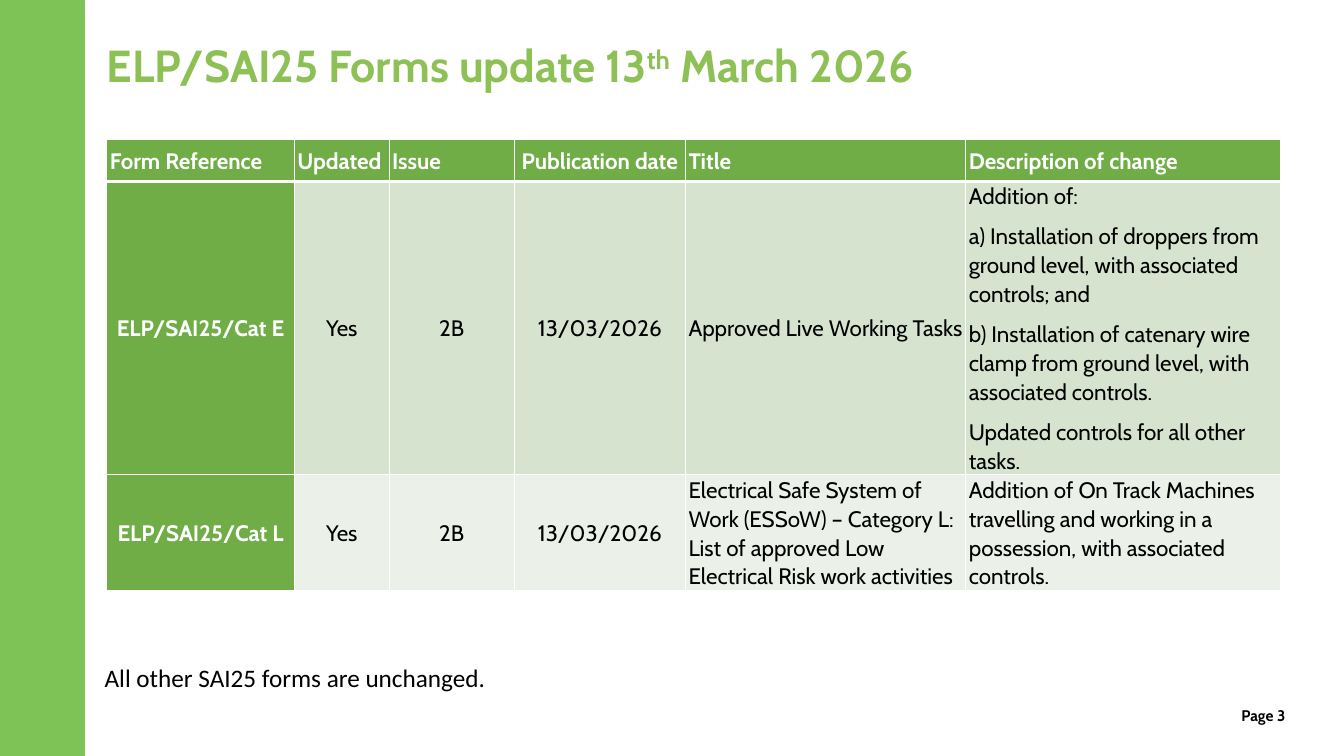
from dataclasses import dataclass

from lxml import etree
from pptx import Presentation
from pptx.dml.color import RGBColor
from pptx.enum.shapes import MSO_SHAPE
from pptx.enum.text import MSO_ANCHOR, MSO_AUTO_SIZE, PP_ALIGN
from pptx.oxml.ns import qn
from pptx.util import Inches, Pt

RECTANGLE = MSO_SHAPE.RECTANGLE
MIDDLE = MSO_ANCHOR.MIDDLE
NO_FIT = MSO_AUTO_SIZE.NONE
LEFT, CENTER = PP_ALIGN.LEFT, PP_ALIGN.CENTER


@dataclass(frozen=True)
class Theme:
    white: str = "FFFFFF"
    black: str = "000000"
    side_band: str = "7DC356"
    title_green: str = "8DC055"
    header_green: str = "70AD47"
    row_fills: tuple = ("D5E3CF", "EBF1E9")
    heading_font: str = "Cabin"
    note_font: str = "Calibri"
    title_size: int = 32
    note_size: int = 18
    table_size: int = 16
    page_size: int = 11


THEME = Theme()
TITLE_PARTS = ("ELP/SAI25 Forms update 13", "th", " March 2026")
COLUMN_WIDTHS = (1.86, 0.94, 1.24, 1.7, 2.78, 3.12)
ROW_HEIGHTS = (0.42, 2.91, 1.15)
HEADER_ALIGNMENTS = (LEFT, LEFT, LEFT, CENTER, LEFT, LEFT)
BODY_ALIGNMENTS = (CENTER, CENTER, CENTER, CENTER, LEFT, LEFT)
FORM_ROWS = (
    ("Form Reference", "Updated", "Issue", "Publication date", "Title",
     "Description of change"),
    ("ELP/SAI25/Cat E", "Yes", "2B", "13/03/2026", "Approved Live Working Tasks",
     "Addition of:\n"
     "a) Installation of droppers from ground level, with associated controls; and\n"
     "b) Installation of catenary wire clamp from ground level, with associated controls.\n"
     "Updated controls for all other tasks."),
    ("ELP/SAI25/Cat L", "Yes", "2B", "13/03/2026",
     "Electrical Safe System of Work (ESSoW) – Category L: "
     "List of approved Low Electrical Risk work activities",
     "Addition of On Track Machines travelling and working in a possession, "
     "with associated controls."),
)


def format_run(run, font_name, size, color, bold=False):
    run.font.name = font_name
    run.font.size = Pt(size)
    run.font.bold = bold
    run.font.color.rgb = RGBColor.from_string(color)


def set_margins(target, horizontal, vertical):
    target.margin_left = target.margin_right = Inches(horizontal)
    target.margin_top = target.margin_bottom = Inches(vertical)


def add_side_band(slide, left, top, width, height):
    band = slide.shapes.add_shape(
        RECTANGLE, Inches(left), Inches(top), Inches(width), Inches(height))
    band.shadow.inherit = False
    band.fill.solid()
    band.fill.fore_color.rgb = RGBColor.from_string(THEME.side_band)
    band.line.color.rgb = RGBColor.from_string(THEME.side_band)
    band.line.width = Pt(0.5)


def place_title(slide, left, top, width, height):
    title = slide.shapes.title
    title.left, title.top = Inches(left), Inches(top)
    title.width, title.height = Inches(width), Inches(height)
    text_frame = title.text_frame
    text_frame.auto_size = NO_FIT
    text_frame.vertical_anchor = MIDDLE
    set_margins(text_frame, 0, 0.05)
    paragraph = text_frame.paragraphs[0]
    paragraph.alignment = LEFT
    paragraph.line_spacing = 0.9
    for part in TITLE_PARTS:
        run = paragraph.add_run()
        run.text = part
        format_run(run, THEME.heading_font, THEME.title_size, THEME.title_green, True)
    paragraph.runs[1].font._element.set("baseline", "30000")


def set_borders(cell, bottom_width):
    properties = cell._tc.get_or_add_tcPr()
    sides = (("a:lnL", 1), ("a:lnR", 1), ("a:lnT", 1), ("a:lnB", bottom_width))
    for position, (side, width) in enumerate(sides):
        line = etree.Element(qn(side), w=str(Pt(width)))
        fill = etree.SubElement(line, qn("a:solidFill"))
        etree.SubElement(fill, qn("a:srgbClr"), val=THEME.white)
        properties.insert(position, line)


def format_cell(cell, text, fill, color, bold, alignment, bottom_width):
    cell.fill.solid()
    cell.fill.fore_color.rgb = RGBColor.from_string(fill)
    cell.vertical_anchor = MIDDLE
    set_margins(cell, 0.03, 0)
    set_borders(cell, bottom_width)
    cell.text_frame.text = text
    for paragraph in cell.text_frame.paragraphs:
        paragraph.alignment = alignment
        paragraph.line_spacing = 1.07
        paragraph.space_after = Pt(8)
        format_run(paragraph.runs[0], THEME.heading_font, THEME.table_size, color, bold)


def add_forms_table(slide, left, top):
    table = slide.shapes.add_table(
        len(ROW_HEIGHTS), len(COLUMN_WIDTHS), Inches(left), Inches(top),
        Inches(sum(COLUMN_WIDTHS)), Inches(sum(ROW_HEIGHTS))).table
    for column, width in zip(table.columns, COLUMN_WIDTHS):
        column.width = Inches(width)
    for row, height in zip(table.rows, ROW_HEIGHTS):
        row.height = Inches(height)
    for row_index, texts in enumerate(FORM_ROWS):
        is_header = row_index == 0
        alignments = HEADER_ALIGNMENTS if is_header else BODY_ALIGNMENTS
        for column_index, text in enumerate(texts):
            is_strong = is_header or column_index == 0
            format_cell(
                table.cell(row_index, column_index), text,
                THEME.header_green if is_strong else THEME.row_fills[row_index - 1],
                THEME.white if is_strong else THEME.black,
                is_strong, alignments[column_index], 3 if is_header else 1)


def add_label(slide, box, text, font_name, size, bold=False, alignment=LEFT,
              margins=(0.1, 0.05)):
    label = slide.shapes.add_textbox(*(Inches(length) for length in box))
    text_frame = label.text_frame
    text_frame.word_wrap = True
    set_margins(text_frame, *margins)
    text_frame.text = text
    paragraph = text_frame.paragraphs[0]
    paragraph.alignment = alignment
    format_run(paragraph.runs[0], font_name, size, THEME.black, bold)


def build_forms_slide(presentation):
    slide = presentation.slides.add_slide(presentation.slide_layouts[5])
    add_label(slide, (11.72, 7.01, 1.62, 0.19), "Page 3", THEME.heading_font,
              THEME.page_size, True, CENTER, (0, 0))
    add_side_band(slide, -0.01, 0, 0.85, 7.5)
    place_title(slide, 1.06, 0.22, 11.81, 0.91)
    add_forms_table(slide, 1.06, 1.38)
    add_label(slide, (0.94, 6.52, 9.76, 0.4), "All other SAI25 forms are unchanged.",
              THEME.note_font, THEME.note_size)


def main():
    presentation = Presentation()
    presentation.slide_width = Inches(13.33)
    presentation.slide_height = Inches(7.5)
    build_forms_slide(presentation)
    presentation.save("out.pptx")


if __name__ == "__main__":
    main()
